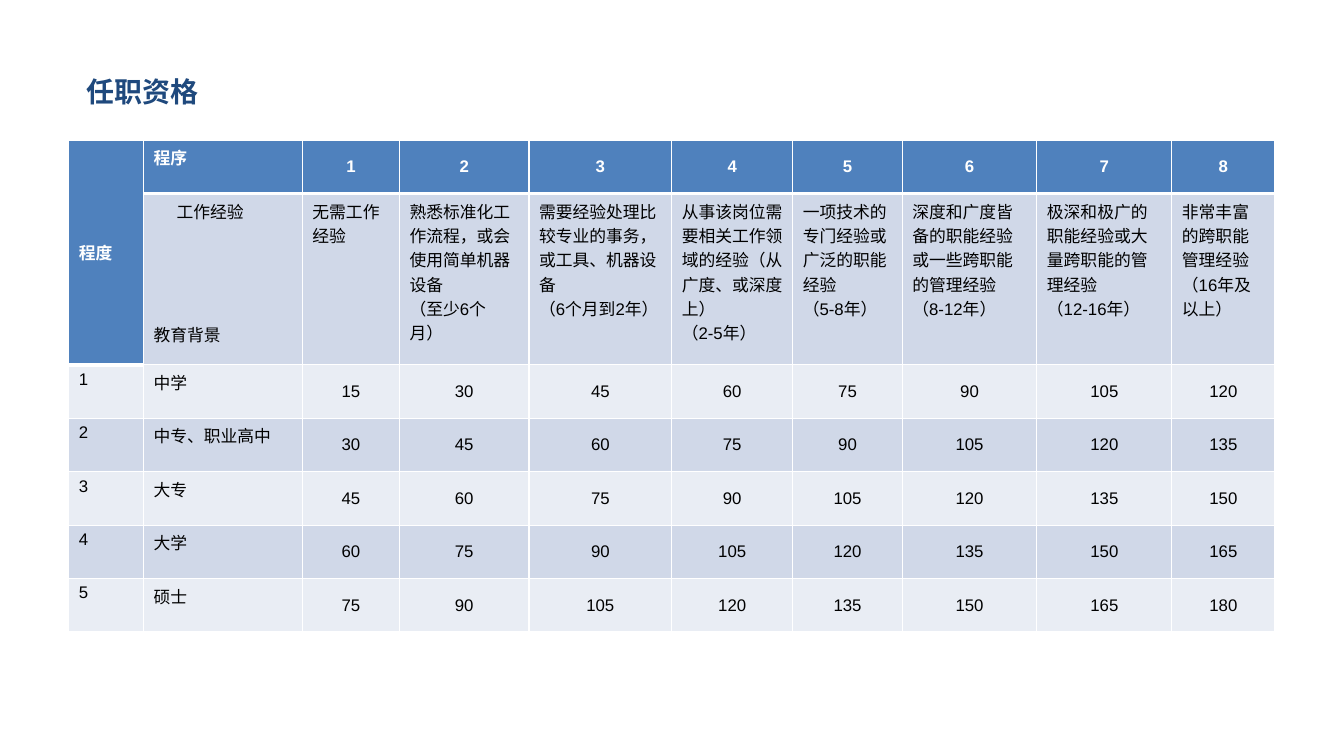
from lxml.etree import SubElement
from pptx import Presentation
from pptx.dml.color import RGBColor
from pptx.enum.text import MSO_ANCHOR as Anchor, PP_ALIGN as Align
from pptx.oxml.ns import qn
from pptx.util import Pt

HEADER, DARK_BAND, LIGHT_BAND, WHITE = "4F81BD", "D0D8E8", "E9EDF4", "FFFFFF"
CHINESE_FONT = "Noto Sans CJK SC"
COLUMN_WIDTHS = [53.3, 113.6, 69.4, 92.6, 102, 86.5, 78.3, 96.2, 96.5, 73.6]
ROW_HEIGHTS = [38.16, 122.4] + [38.16] * 5
EXPERIENCE = [
    ["无需工作经验"],
    ["熟悉标准化工作流程，或会使用简单机器设备", "（至少6个月）"],
    ["需要经验处理比较专业的事务，或工具、机器设备", "（6个月到2年）"],
    ["从事该岗位需要相关工作领域的经验（从广度、或深度上）", "（2-5年）"],
    ["一项技术的专门经验或广泛的职能经验", "（5-8年）"],
    ["深度和广度皆备的职能经验或一些跨职能的管理经验（8-12年）"],
    ["极深和极广的职能经验或大量跨职能的管理经验", "（12-16年）"],
    ["非常丰富的跨职能管理经验", "（16年及以上）"],
]
EDUCATION = ["中学", "中专、职业高中", "大专", "大学", "硕士"]
STEPS = range(1, len(EXPERIENCE) + 1)


def color(value):
    return RGBColor.from_string(value)


def write(frame, lines, size, latin, text_color, bold):
    frame.word_wrap = True
    frame.text = "\n".join(lines)
    for para in frame.paragraphs:
        font = para.font
        font.size, font.bold, font.name = Pt(size), bold, latin
        font.color.rgb = color(text_color)
        defaults = para._p.pPr.find(qn("a:defRPr"))
        SubElement(defaults, qn("a:ea"), typeface=CHINESE_FONT)


deck = Presentation()
deck.slide_width, deck.slide_height = Pt(960.48), Pt(540)
page = deck.slides.add_slide(deck.slide_layouts[6])

rows = [
    [["程度"], ["程序"]] + [[str(step)] for step in STEPS],
    [[""], ["工作经验", "教育背景"]] + EXPERIENCE,
]
for level, degree in enumerate(EDUCATION, 1):
    scores = [[str(15 * (level + step - 1))] for step in STEPS]
    rows.append([[str(level)], [degree]] + scores)

table = page.shapes.add_table(
    len(rows), len(COLUMN_WIDTHS), Pt(49.2), Pt(100.1),
    Pt(sum(COLUMN_WIDTHS)), Pt(sum(ROW_HEIGHTS))).table
for column, width in zip(table.columns, COLUMN_WIDTHS):
    column.width = Pt(width)
for row, height in zip(table.rows, ROW_HEIGHTS):
    row.height = Pt(height)
table.cell(0, 0).merge(table.cell(1, 0))

for row_index, row in enumerate(rows):
    for column_index, lines in enumerate(row):
        cell = table.cell(row_index, column_index)
        header = row_index == 0 or cell.is_spanned
        properties = cell._tc.get_or_add_tcPr()
        for side in "LRTB":
            weight = 3 if header and side == "B" else 1
            border = SubElement(properties, qn(f"a:ln{side}"), w=str(Pt(weight)))
            paint = SubElement(border, qn("a:solidFill"))
            SubElement(paint, qn("a:srgbClr"), val=WHITE)
        band = LIGHT_BAND if row_index % 2 == 0 else DARK_BAND
        cell.fill.solid()
        cell.fill.fore_color.rgb = color(HEADER if header else band)
        if cell.is_spanned:
            continue
        write(cell.text_frame, lines, 12, "Arial", WHITE if header else "000000", header)
        if column_index > 1 and row_index != 1:
            cell.vertical_anchor = Anchor.MIDDLE
            cell.text_frame.paragraphs[0].alignment = Align.CENTER

table.cell(0, 0).vertical_anchor = Anchor.MIDDLE
experience_label, education_label = table.cell(1, 1).text_frame.paragraphs
experience_label._p.pPr.set("indent", str(Pt(16.5)))
education_label.space_before = Pt(70.5)

title = page.shapes.add_textbox(Pt(54.7), Pt(49.7), Pt(285), Pt(39))
write(title.text_frame, ["任职资格"], 20, CHINESE_FONT, "1F497D", True)

deck.save("out.pptx")
